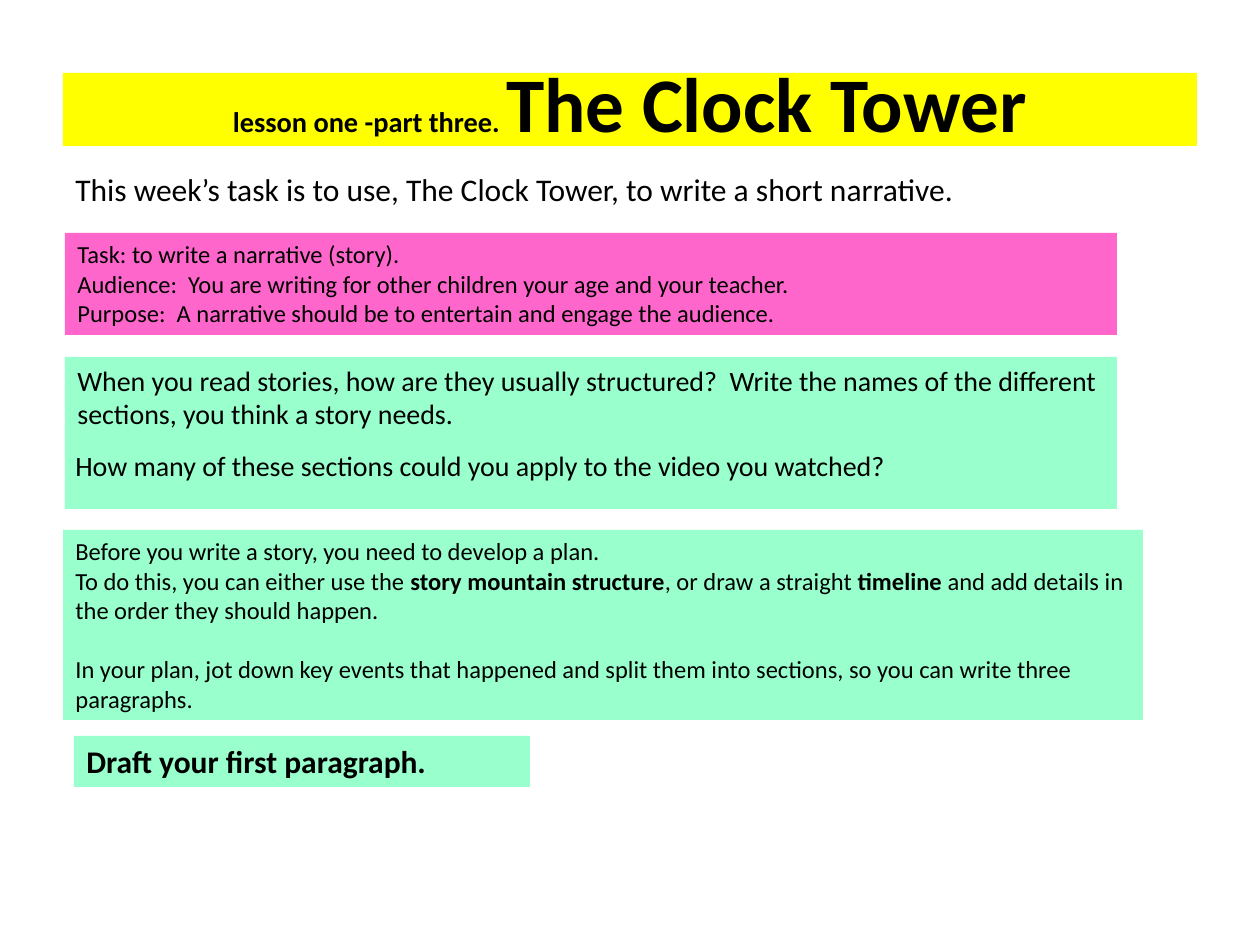
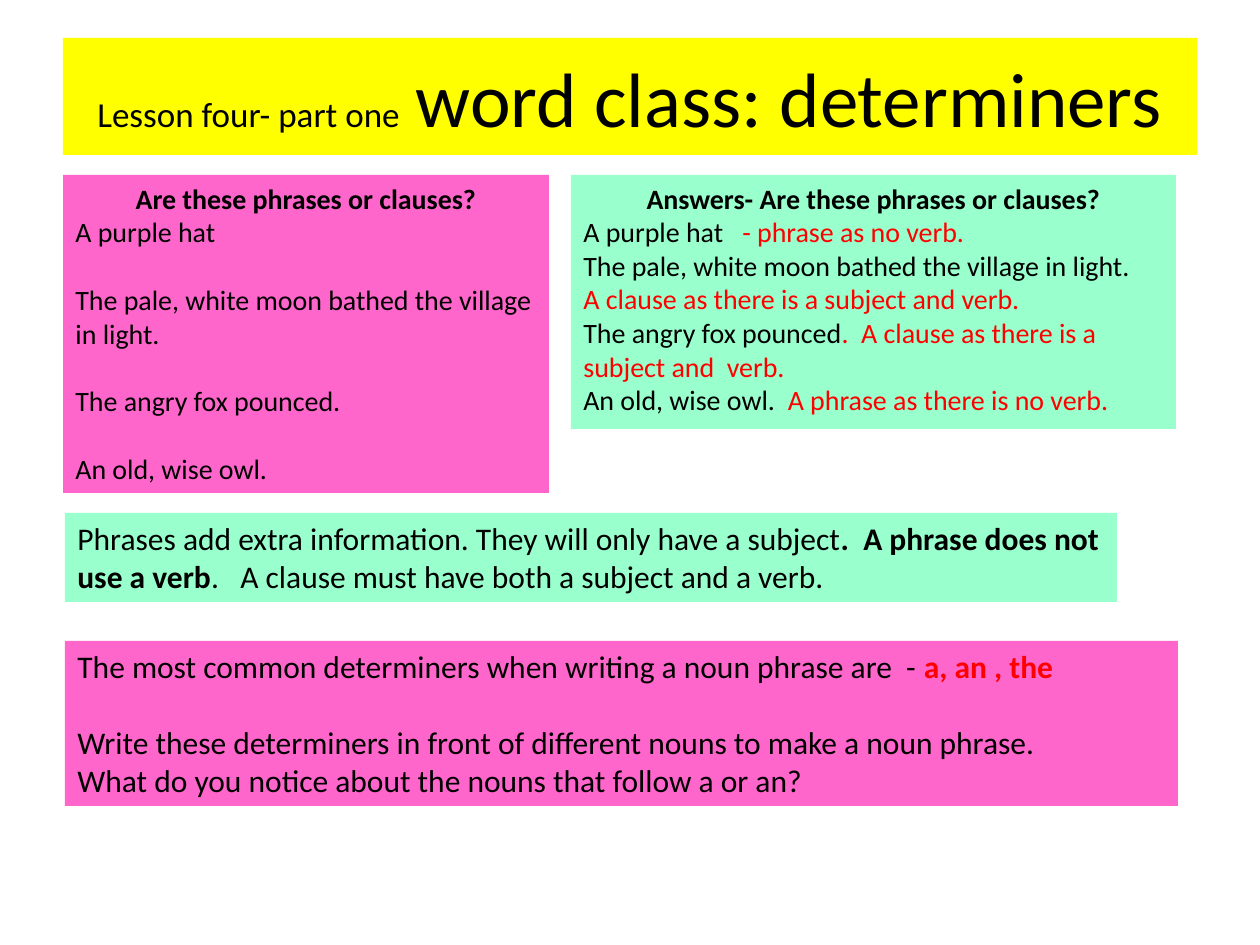
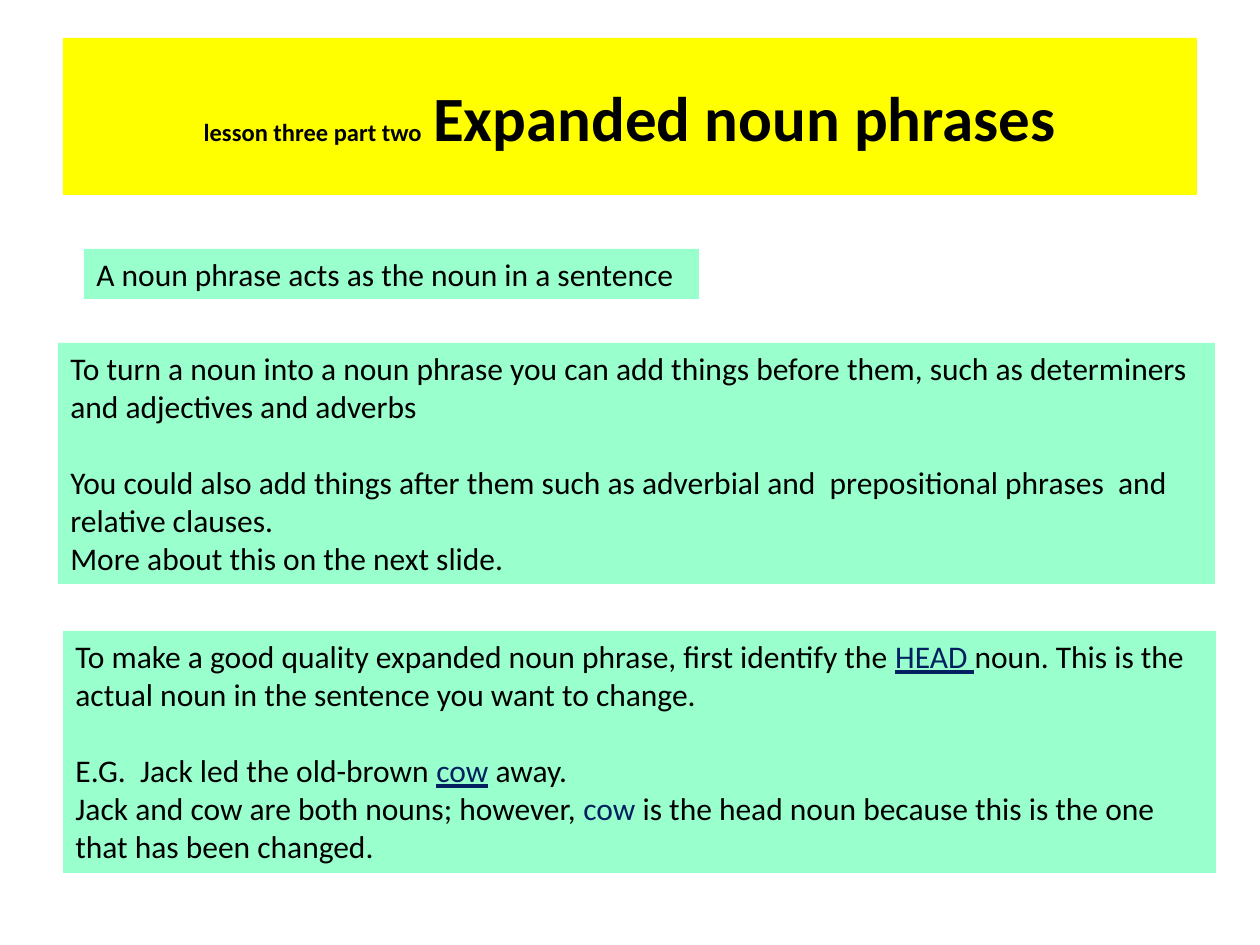
from pptx import Presentation
from pptx import util as u
from pptx.dml.color import RGBColor
from pptx.enum import shapes, text

PX = 914400 / 126
WIDE, HIGH = 1260, 945
FONT = "Calibri"
YELLOW, PINK, MINT = "FFFF00", "FF66CC", "99FFCC"
BLACK, RED, NAVY = "000000", "FF0000", "002060"


def px(n):
    return u.Emu(round(n * PX))


def rgb(code):
    return RGBColor.from_string(code)


def bold(words, color=BLACK):
    return words, color, True, False


def tint(words, color, under=False):
    return words, color, False, under


class Deck:
    def __init__(self):
        self.prs = Presentation()
        self.prs.slide_width, self.prs.slide_height = px(WIDE), px(HIGH)
        self.slide = None

    def page(self):
        self.slide = self.prs.slides.add_slide(self.prs.slide_layouts[6])

    def run(self, para, part, size):
        """Add one run; a plain string is black and regular."""
        words, color, heavy, under = tint(part, BLACK) if isinstance(part, str) else part
        run = para.add_run()
        run.text = words
        font = run.font
        font.name, font.size = FONT, u.Pt(size)
        font.bold, font.underline = heavy, under
        font.color.rgb = rgb(color)

    def fill(self, frame, paras, size, gaps=(), head=False):
        """Add paragraphs; those numbered in gaps follow one line of space."""
        frame.word_wrap = True
        for i, parts in enumerate(paras):
            para = frame.paragraphs[0] if i == 0 else frame.add_paragraph()
            mid = head and i == 0
            para.alignment = text.PP_ALIGN.CENTER if mid else text.PP_ALIGN.LEFT
            if i in gaps:
                para.space_before = u.Pt(round(size * 1.22, 1))
            for part in parts:
                self.run(para, part, size)

    def rect(self, box, color):
        shape = self.slide.shapes.add_shape(
            shapes.MSO_SHAPE.RECTANGLE, *map(px, box))
        shape.shadow.inherit = False
        shape.fill.solid()
        shape.fill.fore_color.rgb = rgb(color)
        shape.line.fill.background()
        return shape.text_frame

    def title(self, top, high, small, big, lift=0):
        """Yellow band with a small lead and a large name, each (part, size)."""
        frame = self.rect((63, top, 1134, high), YELLOW)
        frame.word_wrap = True
        frame.vertical_anchor = text.MSO_ANCHOR.MIDDLE
        frame.margin_top, frame.margin_bottom = 0, px(2 * lift)
        para = frame.paragraphs[0]
        para.alignment = text.PP_ALIGN.CENTER
        for part, size in (small, big):
            self.run(para, part, size)

    def card(self, box, color, paras, size, **opts):
        frame = self.rect(box, color)
        frame.vertical_anchor = text.MSO_ANCHOR.TOP
        self.fill(frame, paras, size, **opts)

    def note(self, box, paras, size):
        label = self.slide.shapes.add_textbox(*map(px, box))
        self.fill(label.text_frame, paras, size)


def tower(deck):
    deck.page()
    deck.title(73, 73, (bold("lesson one -part three. "), 16.2),
               (bold("The Clock Tower"), 44.1), lift=8)
    deck.note((63, 164, 1081, 51), [
        ["This week’s task is to use, The Clock Tower, to write a short narrative."],
    ], 18)
    deck.card((65, 233, 1052, 102), PINK, [
        ["Task: to write a narrative (story)."],
        ["Audience:  You are writing for other children your age and your teacher."],
        ["Purpose:  A narrative should be to entertain and engage the audience."],
    ], 14)
    # Questions on structure
    deck.card((65, 357, 1052, 152), MINT, [
        ["When you read stories, how are they usually structured?  Write the names "
         "of the different sections, you think a story needs."],
    ], 16)
    deck.note((63, 442, 1032, 47), [
        ["How many of these sections could you apply to the video you watched?"],
    ], 16)
    # Plan and draft
    deck.card((63, 530, 1080, 190), MINT, [
        ["Before you write a story, you need to develop a plan."],
        ["To do this, you can either use the ", bold("story mountain structure"),
         ", or draw a straight ", bold("timeline "),
         "and add details in the order they should happen."],
        ["In your plan, jot down key events that happened and split them into "
         "sections, so you can write three paragraphs."],
    ], 14, gaps=(2,))
    deck.card((74, 736, 456, 51), MINT, [[bold("Draft your first paragraph.")]], 18)


def words(deck):
    deck.page()
    deck.title(38, 117, ("Lesson four- part one  ", 20),
               ("word class: determiners", 44))
    # Answers and questions side by side
    deck.card((571, 175, 605, 254), MINT, [
        [bold("Answers- Are these phrases or clauses?")],
        ["A purple hat   ", tint("- phrase as no verb.", RED)],
        ["The pale, white moon bathed the village in light."],
        [tint("A clause as there is a subject and verb.", RED)],
        ["The angry fox pounced",
         tint(".  A clause as there is a subject and  verb.", RED)],
        ["An old, wise owl.  ", tint("A phrase as there is no verb.", RED)],
    ], 16, head=True)
    deck.card((63, 175, 486, 318), PINK, [
        [bold("Are these phrases or clauses?")],
        ["A purple hat"],
        ["The pale, white moon bathed the village in light."],
        ["The angry fox pounced."],
        ["An old, wise owl."],
    ], 16, gaps=(2, 3, 4), head=True)
    # Rule and task
    deck.card((65, 513, 1052, 89), MINT, [
        ["Phrases add extra information. They will only have a subject",
         bold(".  A phrase does not use a verb"),
         ".   A clause must have both a subject and a verb."],
    ], 18)
    deck.card((65, 641, 1113, 165), PINK, [
        ["The most common determiners when writing a noun phrase are  - ",
         bold("a, an , the", RED)],
        ["Write these determiners in front of different nouns to make a noun phrase."],
        ["What do you notice about the nouns that follow a or an?"],
    ], 18, gaps=(1,))


def nouns(deck):
    deck.page()
    deck.title(38, 157, (bold("lesson three part two  "), 14),
               (bold("Expanded noun phrases"), 36))
    deck.card((84, 249, 615, 50), MINT,
              [["A noun phrase acts as the noun in a sentence"]], 18)
    deck.card((58, 343, 1157, 241), MINT, [
        ["To turn a noun into a noun phrase you can add things before them, such as "
         "determiners and adjectives and adverbs"],
        ["You could also add things after them such as adverbial and  prepositional "
         "phrases  and relative clauses."],
        ["More about this on the next slide."],
    ], 18, gaps=(1,))
    # Head noun and example
    deck.card((63, 631, 1153, 242), MINT, [
        ["To make a good quality expanded noun phrase, first identify the ",
         tint("HEAD ", NAVY, True),
         "noun. This is the actual noun in the sentence you want to change."],
        ["E.G.  Jack led the old-brown ", tint("cow", NAVY, True), " away."],
        ["Jack and cow are both nouns; however, ", tint("cow", NAVY),
         " is the head noun because this is the one that has been changed."],
    ], 18, gaps=(1,))


def main():
    deck = Deck()
    for build in (tower, words, nouns):
        build(deck)
    deck.prs.save("out.pptx")


if __name__ == "__main__":
    main()
